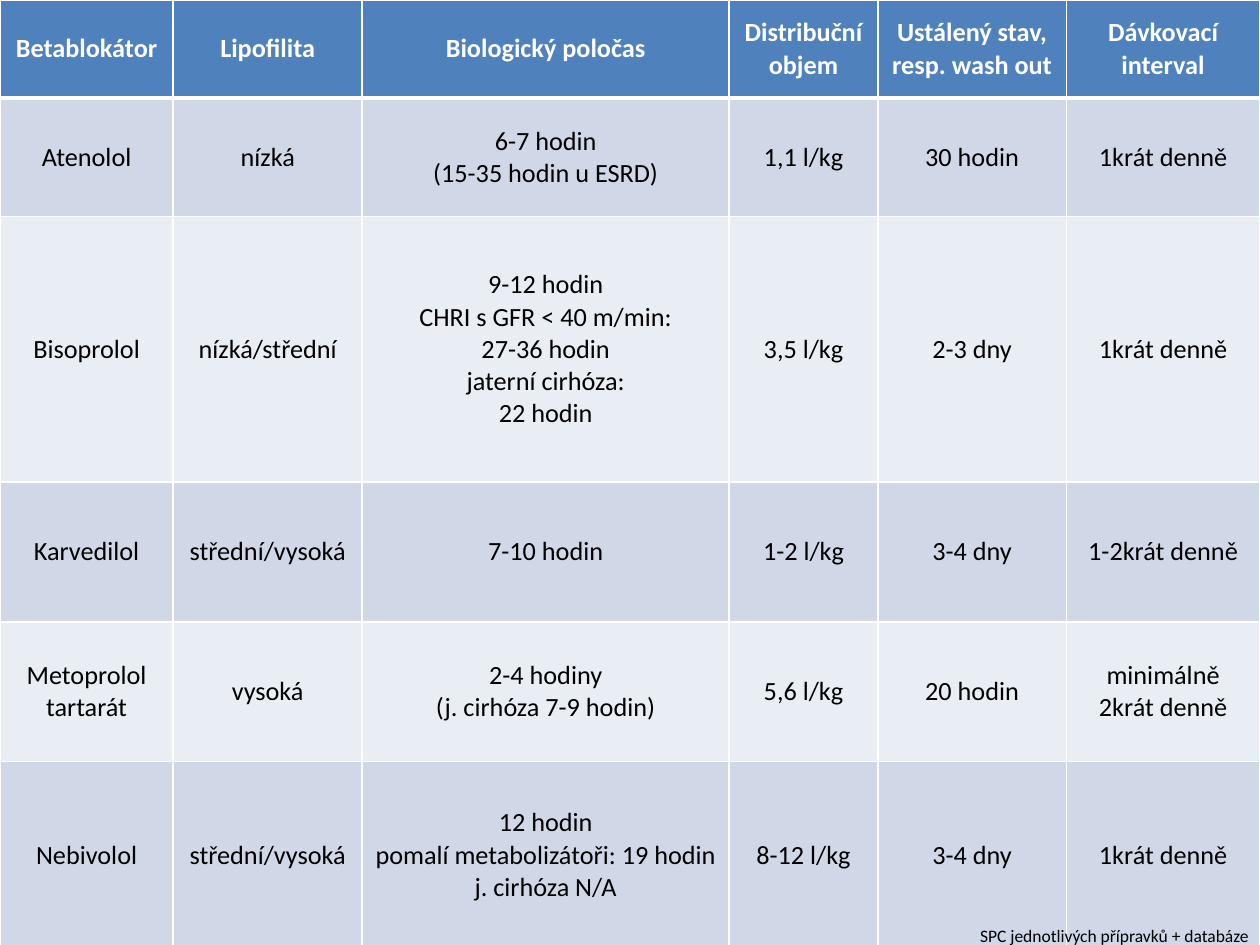
from lxml import etree
from pptx import Presentation
from pptx.dml.color import RGBColor
from pptx.enum.text import MSO_ANCHOR, MSO_AUTO_SIZE, PP_ALIGN
from pptx.oxml.ns import qn
from pptx.util import Pt

MIDDLE = MSO_ANCHOR.MIDDLE
CENTER = PP_ALIGN.CENTER
GROW = MSO_AUTO_SIZE.SHAPE_TO_FIT_TEXT

THEME = {
    "font": "Calibri",
    "table_size": 15,
    "source_size": 10,
    "header_fill": "4F81BD",
    "band_fills": ["D0D8E8", "E9EDF4"],
    "header_text": "FFFFFF",
    "text": "000000",
    "border": "FFFFFF",
    "thin": 1,
    "thick": 3,
}

COLUMN_WIDTHS = [99, 108, 209.7, 85, 107.7, 110.6]
ROW_HEIGHTS = [56, 67.7, 151.9, 79.8, 79.8, 107]

BETA_BLOCKERS = [
    ["Betablokátor", "Lipofilita", "Biologický poločas", "Distribuční objem",
     "Ustálený stav,\nresp. wash out", "Dávkovací interval"],
    ["Atenolol", "nízká", "6-7 hodin\n(15-35 hodin u ESRD)", "1,1 l/kg",
     "30 hodin", "1krát denně"],
    ["Bisoprolol", "nízká/střední",
     "9-12 hodin\nCHRI s GFR < 40 m/min:\n27-36 hodin\njaterní cirhóza:\n22 hodin",
     "3,5 l/kg", "2-3 dny", "1krát denně"],
    ["Karvedilol", "střední/vysoká", "7-10 hodin", "1-2 l/kg",
     "3-4 dny", "1-2krát denně"],
    ["Metoprolol\ntartarát", "vysoká", "2-4 hodiny\n(j. cirhóza 7-9 hodin)",
     "5,6 l/kg", "20 hodin", "minimálně 2krát denně"],
    ["Nebivolol", "střední/vysoká",
     "12 hodin\npomalí metabolizátoři: 19 hodin\nj. cirhóza N/A",
     "8-12 l/kg", "3-4 dny", "1krát denně"],
]


def write_text(text_frame, text, color, font_format, alignment=None):
    text_frame.text = text
    for paragraph in text_frame.paragraphs:
        paragraph.alignment = alignment
        font = paragraph.runs[0].font
        for name, value in font_format.items():
            setattr(font, name, value)
        font.color.rgb = RGBColor.from_string(color)


def set_borders(cell, widths):
    properties = cell._tc.get_or_add_tcPr()
    for position, (side, width) in enumerate(widths.items()):
        line = etree.Element(qn(f"a:ln{side}"), w=str(Pt(width)))
        fill = etree.SubElement(line, qn("a:solidFill"))
        etree.SubElement(fill, qn("a:srgbClr"), val=THEME["border"])
        properties.insert(position, line)


presentation = Presentation()
presentation.slide_width = Pt(720)
presentation.slide_height = Pt(540)
slide = presentation.slides.add_slide(presentation.slide_layouts[6])

table = slide.shapes.add_table(
    len(ROW_HEIGHTS), len(COLUMN_WIDTHS), Pt(0), Pt(0),
    Pt(sum(COLUMN_WIDTHS)), Pt(sum(ROW_HEIGHTS)),
).table
for column, width in zip(table.columns, COLUMN_WIDTHS):
    column.width = Pt(width)

for row_index, (row, height) in enumerate(zip(table.rows, ROW_HEIGHTS)):
    row.height = Pt(height)
    is_header = row_index == 0
    row_fill = THEME["header_fill"] if is_header else THEME["band_fills"][(row_index - 1) % 2]
    text_color = THEME["header_text"] if is_header else THEME["text"]
    cell_font = {"name": THEME["font"], "size": Pt(THEME["table_size"]), "bold": is_header}
    border_widths = {
        "L": THEME["thin"],
        "R": THEME["thin"],
        "T": THEME["thick"] if row_index == 1 else THEME["thin"],
        "B": THEME["thick"] if is_header else THEME["thin"],
    }
    for cell, text in zip(row.cells, BETA_BLOCKERS[row_index]):
        cell.vertical_anchor = MIDDLE
        cell.fill.solid()
        cell.fill.fore_color.rgb = RGBColor.from_string(row_fill)
        set_borders(cell, border_widths)
        write_text(cell.text_frame, text, text_color, cell_font, CENTER)

source_box = slide.shapes.add_textbox(Pt(553), Pt(525), Pt(351), Pt(19.4))
source_box.text_frame.word_wrap = True
source_box.text_frame.auto_size = GROW
source_font = {"name": THEME["font"], "size": Pt(THEME["source_size"])}
write_text(source_box.text_frame, "SPC jednotlivých přípravků + databáze",
           THEME["text"], source_font)

presentation.save("out.pptx")
